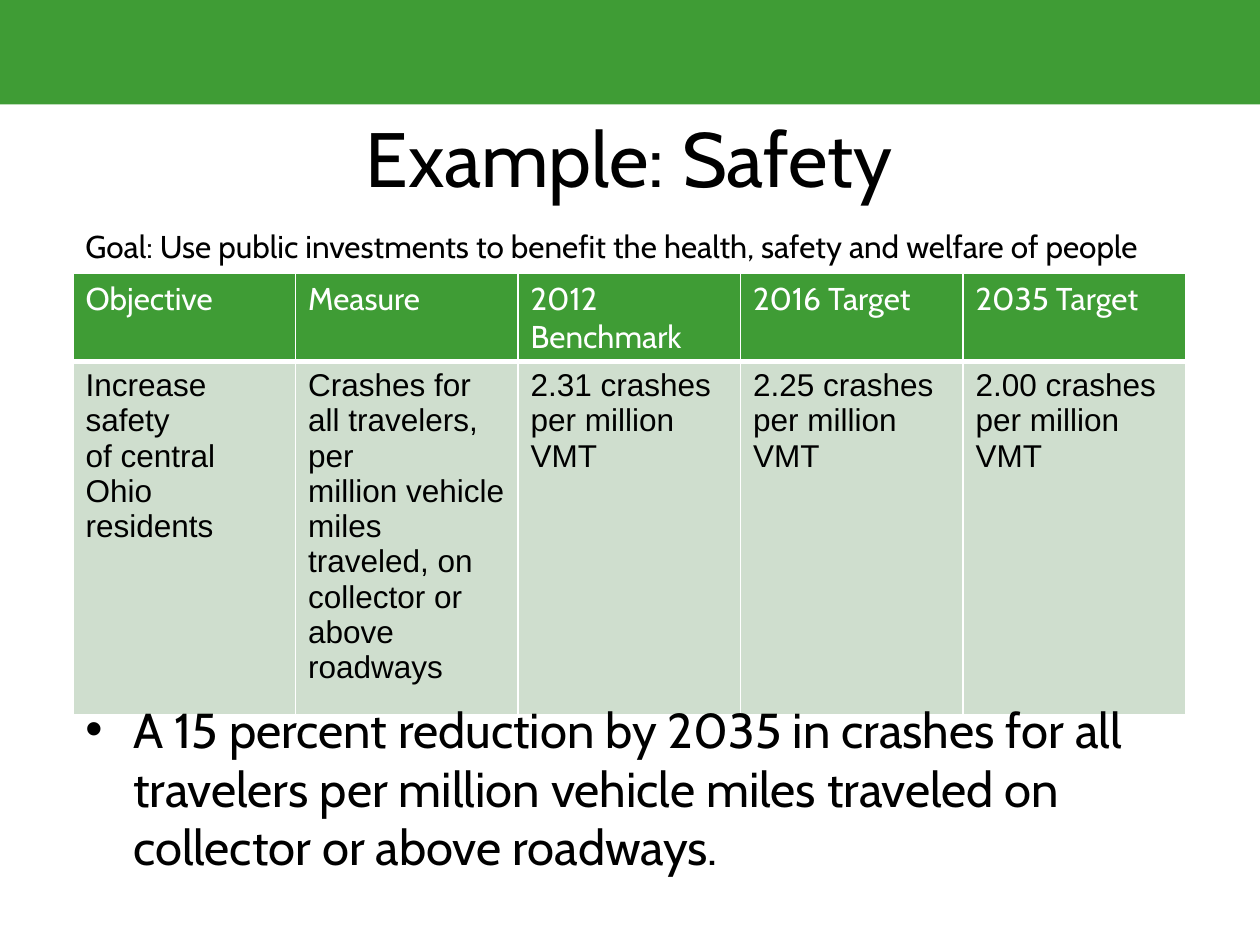
"""Build the safety example slide with its target table."""
from typing import NamedTuple

from lxml.etree import SubElement
from pptx import Presentation
from pptx.dml.color import RGBColor
from pptx.enum.shapes import MSO_SHAPE
from pptx.enum.text import MSO_ANCHOR, PP_ALIGN
from pptx.oxml.ns import qn
from pptx.util import Inches, Pt

GREEN = RGBColor(0x3F, 0x9C, 0x35)
PALE_GREEN = RGBColor(0xCF, 0xDE, 0xCE)
WHITE = RGBColor(0xFF, 0xFF, 0xFF)
BLACK = RGBColor(0, 0, 0)
LEFT, WIDTH = 0.58, 8.83


class TextBlock(NamedTuple):
    text: str
    top: float
    height: float
    size: int
    width: float = WIDTH
    alignment: PP_ALIGN = PP_ALIGN.LEFT
    bulleted: bool = False
    wrapped: bool = True


class Column(NamedTuple):
    heading: str
    lines: list[str]


class RowStyle(NamedTuple):
    font_name: str
    font_color: RGBColor
    fill_color: RGBColor
    height: float
    top_border: int
    bottom_border: int


TEXT_BLOCKS = [
    TextBlock("Example: Safety", 0.83, 1.17, 44, alignment=PP_ALIGN.CENTER),
    TextBlock("A 15 percent reduction by 2035 in crashes for all travelers per million "
              "vehicle miles traveled on collector or above roadways.",
              5.5, 1.42, 28, bulleted=True),
    TextBlock("Goal: Use public investments to benefit the health, safety and welfare "
              "of people", 1.75, 0.4, 18, width=8.67, wrapped=False),
]
COLUMNS = [
    Column("Objective", ["Increase safety", "of central Ohio", "residents"]),
    Column("Measure", ["Crashes for all travelers, per", "million vehicle miles",
                       "traveled, on collector or", "above roadways"]),
    Column("2012 Benchmark", ["2.31 crashes per million VMT"]),
    Column("2016 Target", ["2.25 crashes per million", "VMT"]),
    Column("2035 Target", ["2.00 crashes per million VMT"]),
]
HEADER_STYLE = RowStyle("Cabin", WHITE, GREEN, 0.68, 1, 3)
BODY_STYLE = RowStyle("Arial", BLACK, PALE_GREEN, 2.43, 3, 1)


def style_paragraph(paragraph, name: str, size: int, color: RGBColor) -> None:
    paragraph.font.name = name
    paragraph.font.size = Pt(size)
    paragraph.font.color.rgb = color


def add_bullet(paragraph) -> None:
    properties = paragraph._p.get_or_add_pPr()
    properties.set("marL", str(Inches(0.38)))
    properties.set("indent", str(Inches(-0.38)))
    SubElement(properties, qn("a:buFont"), typeface="Arial")
    SubElement(properties, qn("a:buChar"), char="•")


def add_text(slide, block: TextBlock) -> None:
    shape = slide.shapes.add_textbox(Inches(LEFT), Inches(block.top),
                                     Inches(block.width), Inches(block.height))
    frame = shape.text_frame
    frame.word_wrap = block.wrapped
    frame.vertical_anchor = MSO_ANCHOR.TOP
    paragraph = frame.paragraphs[0]
    paragraph.text = block.text
    paragraph.alignment = block.alignment
    if block.bulleted:
        add_bullet(paragraph)
    style_paragraph(paragraph, "Cabin", block.size, BLACK)


def set_borders(cell, style: RowStyle) -> None:
    properties = cell._tc.get_or_add_tcPr()
    widths = {"a:lnL": 1, "a:lnR": 1, "a:lnT": style.top_border, "a:lnB": style.bottom_border}
    for tag, width in widths.items():
        line = SubElement(properties, qn(tag), w=str(Pt(width)))
        fill = SubElement(line, qn("a:solidFill"))
        SubElement(fill, qn("a:srgbClr"), val=str(WHITE))


def fill_cell(cell, lines: list[str], style: RowStyle) -> None:
    cell.text = "\n".join(lines)
    for paragraph in cell.text_frame.paragraphs:
        style_paragraph(paragraph, style.font_name, 18, style.font_color)
    set_borders(cell, style)
    cell.fill.solid()
    cell.fill.fore_color.rgb = style.fill_color


def add_target_table(slide) -> None:
    styles = [HEADER_STYLE, BODY_STYLE]
    height = sum(style.height for style in styles)
    table = slide.shapes.add_table(len(styles), len(COLUMNS), Inches(LEFT), Inches(2.17),
                                   Inches(WIDTH), Inches(height)).table
    for row, style in zip(table.rows, styles):
        row.height = Inches(style.height)
    for index, column in enumerate(COLUMNS):
        fill_cell(table.cell(0, index), [column.heading], HEADER_STYLE)
        fill_cell(table.cell(1, index), column.lines, BODY_STYLE)


def add_banner(slide) -> None:
    banner = slide.shapes.add_shape(MSO_SHAPE.RECTANGLE, 0, 0, Inches(10), Inches(0.83))
    banner.shadow.inherit = False
    banner.fill.solid()
    banner.fill.fore_color.rgb = GREEN
    banner.line.fill.background()


def main() -> None:
    presentation = Presentation()
    presentation.slide_width = Inches(10)
    presentation.slide_height = Inches(7.5)
    slide = presentation.slides.add_slide(presentation.slide_layouts[6])
    title, conclusion, goal = TEXT_BLOCKS
    add_banner(slide)
    add_text(slide, title)
    add_target_table(slide)
    add_text(slide, conclusion)
    add_text(slide, goal)
    presentation.save("out.pptx")


if __name__ == "__main__":
    main()
